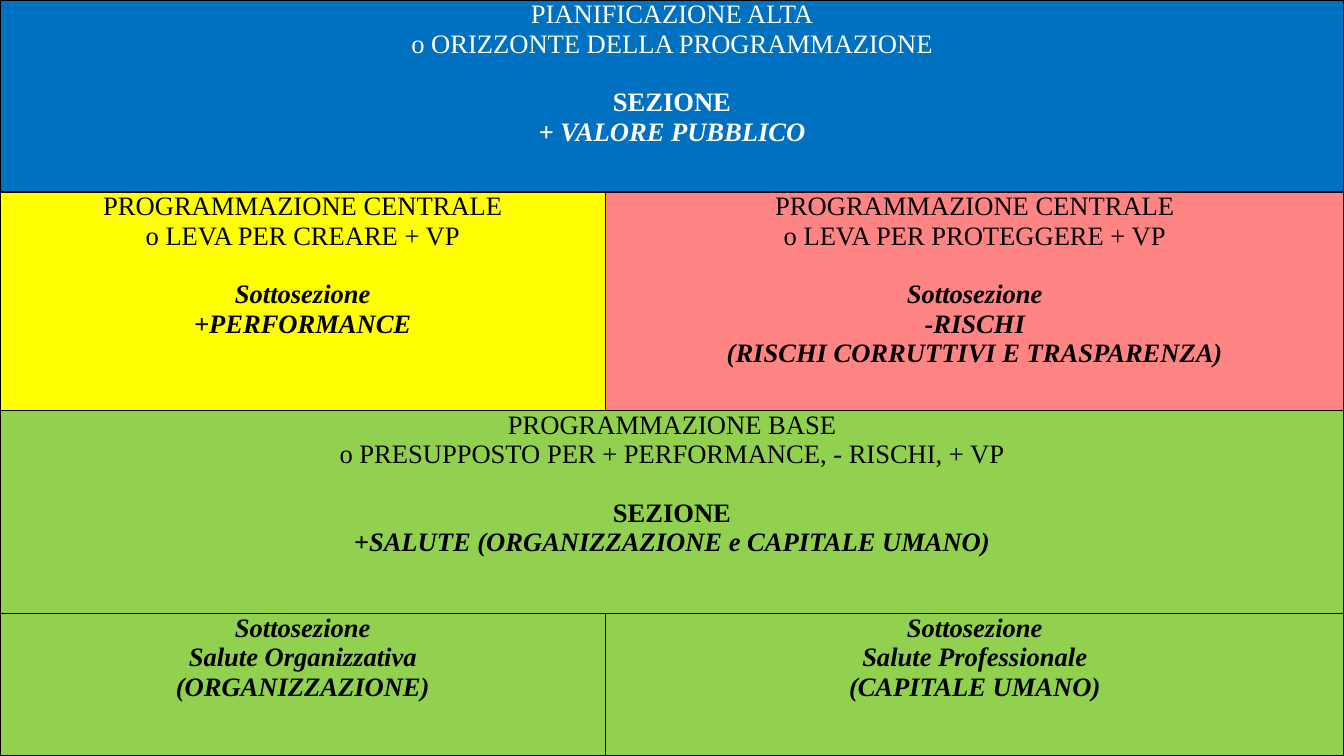
from lxml import etree
from pptx import Presentation
from pptx.dml.color import RGBColor
from pptx.enum.text import PP_ALIGN
from pptx.oxml.ns import qn
from pptx.util import Inches, Pt

CENTER = PP_ALIGN.CENTER
BLANK = 6
COLORS = {
    "white": "FFFFFF", "black": "000000", "blue": "0070C0",
    "yellow": "FFFF00", "pink": "FF8585", "green": "92D050",
}
PLAIN = {"bold": False, "italic": False}
BOLD = {"bold": True, "italic": False}
SLANT = {"bold": True, "italic": True}

# Column and row sizes in percent of the slide
COLS = [45.05, 54.95]
ROWS = [25.4, 28.9, 26.9, 18.8]

# Row, column, columns spanned, fill, ink, side inset in inches,
# then blocks of lines parted by one line of space
CELLS = [
    (0, 0, 2, "blue", "white", 0, [
        [("PIANIFICAZIONE ALTA", PLAIN),
         ("o ORIZZONTE DELLA PROGRAMMAZIONE", PLAIN)],
        [("SEZIONE", BOLD), ("+ VALORE PUBBLICO", SLANT)]]),
    (1, 0, 1, "yellow", "black", 0, [
        [("PROGRAMMAZIONE CENTRALE", PLAIN),
         ("o LEVA PER CREARE + VP", PLAIN)],
        [("Sottosezione", SLANT), ("+PERFORMANCE", SLANT)]]),
    (1, 1, 1, "pink", "black", 0, [
        [("PROGRAMMAZIONE CENTRALE", PLAIN),
         ("o LEVA PER PROTEGGERE + VP", PLAIN)],
        [("Sottosezione", SLANT), ("-RISCHI", SLANT),
         ("(RISCHI CORRUTTIVI E TRASPARENZA)", SLANT)]]),
    (2, 0, 2, "green", "black", 0.02, [
        [("PROGRAMMAZIONE BASE", PLAIN),
         ("o PRESUPPOSTO PER + PERFORMANCE, - RISCHI, + VP", PLAIN)],
        [("SEZIONE", BOLD),
         ("+SALUTE (ORGANIZZAZIONE e CAPITALE UMANO)", SLANT)]]),
    (3, 0, 1, "green", "black", 0, [
        [("Sottosezione", SLANT), ("Salute Organizzativa", SLANT),
         ("(ORGANIZZAZIONE)", SLANT)]]),
    (3, 1, 1, "green", "black", 0.02, [
        [("Sottosezione", SLANT), ("Salute Professionale", SLANT),
         ("(CAPITALE UMANO)", SLANT)]]),
]


class Deck:
    font = {"name": "Times New Roman", "size": Pt(19)}
    gap = Pt(21)
    edge = Pt(1)

    def __init__(self, width, height):
        self.prs = Presentation()
        self.prs.slide_width = self.width = Inches(width)
        self.prs.slide_height = self.height = Inches(height)
        self.slide = self.prs.slides.add_slide(self.prs.slide_layouts[BLANK])

    def table(self, cols, rows):
        """Add a table that fills the slide, sized in percent."""
        grid = self.slide.shapes.add_table(
            len(rows), len(cols), 0, 0, self.width, self.height).table
        grid.first_row = grid.horz_banding = False
        for col, share in zip(grid.columns, cols):
            col.width = int(self.width * share / 100)
        for row, share in zip(grid.rows, rows):
            row.height = int(self.height * share / 100)
        return grid

    def cell(self, grid, row, col, span, fill, ink, inset, blocks):
        cell = grid.cell(row, col)
        if span > 1:
            cell.merge(grid.cell(row, col + span - 1))
        for part in range(col, col + span):
            self.paint(grid.cell(row, part), fill)
        cell.margin_left = cell.margin_right = Inches(inset)
        cell.margin_top = cell.margin_bottom = 0
        self.text(cell.text_frame, blocks, ink)

    def paint(self, cell, fill):
        """Fill a cell and draw its four borders."""
        cell.fill.solid()
        cell.fill.fore_color.rgb = RGBColor.from_string(COLORS[fill])
        props = cell._tc.get_or_add_tcPr()
        for spot, side in enumerate("LRTB"):
            line = etree.Element(qn(f"a:ln{side}"), w=str(self.edge))
            solid = etree.SubElement(line, qn("a:solidFill"))
            etree.SubElement(solid, qn("a:srgbClr"), val=COLORS["black"])
            props.insert(spot, line)

    def text(self, frame, blocks, ink):
        para = None
        for block in blocks:
            for spot, (words, style) in enumerate(block):
                first = para is None
                para = frame.paragraphs[0] if first else frame.add_paragraph()
                para.alignment = CENTER
                if spot == 0 and not first:
                    para.space_before = self.gap
                run = para.add_run()
                run.text = words
                for name, value in {**self.font, **style}.items():
                    setattr(run.font, name, value)
                run.font.color.rgb = RGBColor.from_string(COLORS[ink])


def main():
    deck = Deck(13.33, 7.5)
    grid = deck.table(COLS, ROWS)
    for item in CELLS:
        deck.cell(grid, *item)
    deck.prs.save("out.pptx")


if __name__ == "__main__":
    main()
